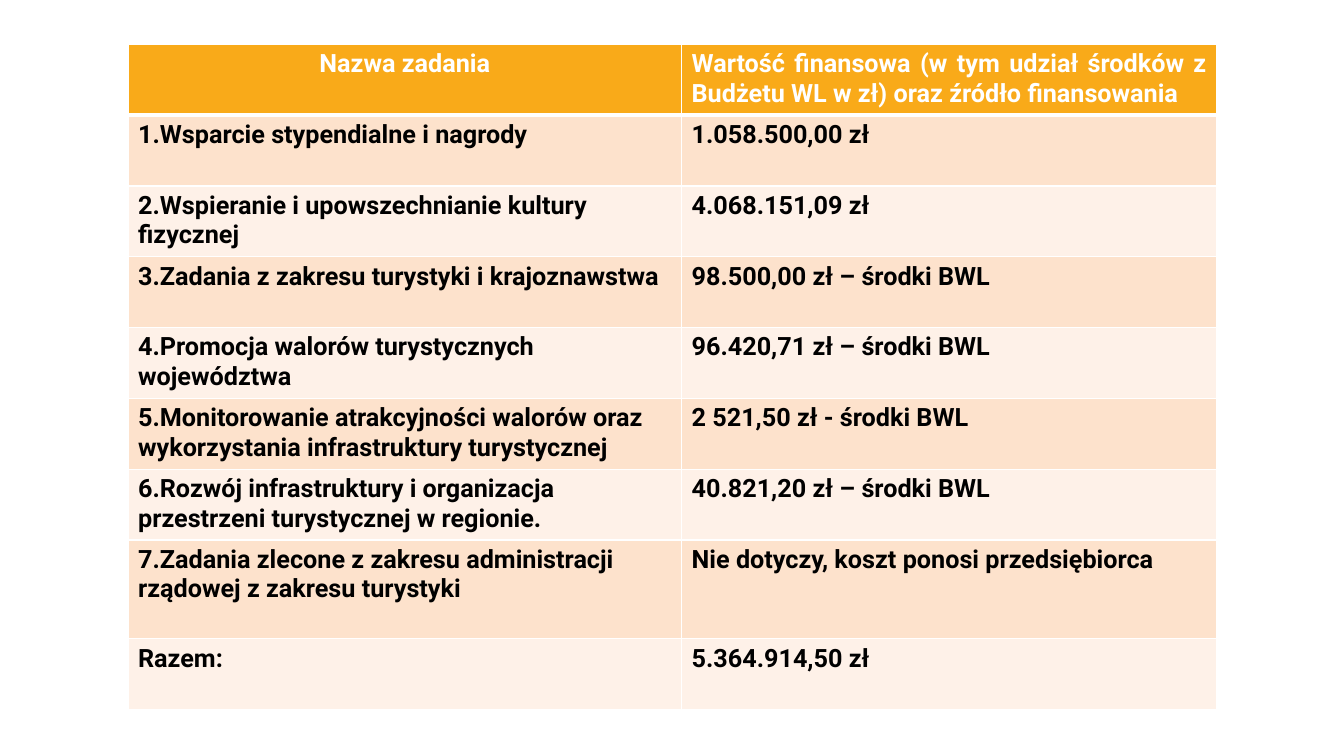
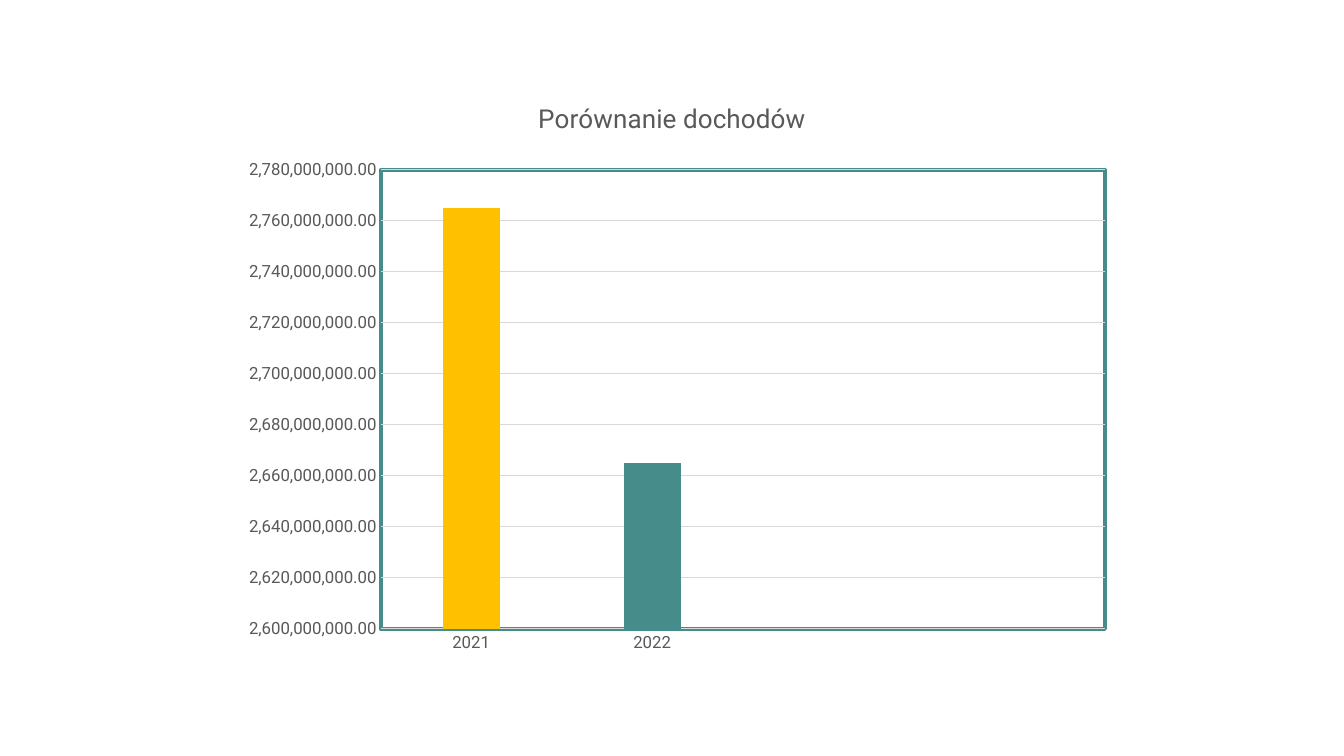
"""Build a budget table slide and an income chart slide."""
from lxml import etree
from pptx import Presentation
from pptx.chart import data
from pptx.dml import color
from pptx.enum import chart as kinds, text as txt
from pptx.oxml import ns, parse_xml
from pptx.util import Inches, Pt

FONT = "Roboto"
WHITE, BLACK, GREY, RULE = "FFFFFF", "000000", "595959", "D9D9D9"
GOLD, TEAL, AMBER = "FFC000", "468C8A", "F9AA19"
RED, PINK = "F2494C", "F39891"
BANDS = ("FDE2CC", "FEF1E8")
LEFT, MID, JUST = txt.PP_ALIGN.LEFT, txt.PP_ALIGN.CENTER, txt.PP_ALIGN.JUSTIFY

HEADS = (
    ("Nazwa zadania", MID),
    ("Wartość finansowa (w tym udział środków z Budżetu WL w zł) "
     "oraz źródło finansowania", JUST),
)
TASKS = (
    ("1.Wsparcie stypendialne i nagrody", "1.058.500,00 zł"),
    ("2.Wspieranie i upowszechnianie kultury fizycznej", "4.068.151,09 zł"),
    ("3.Zadania z zakresu turystyki i krajoznawstwa",
     "98.500,00 zł – środki BWL"),
    ("4.Promocja walorów turystycznych województwa",
     "96.420,71 zł – środki BWL"),
    ("5.Monitorowanie atrakcyjności walorów oraz wykorzystania "
     "infrastruktury turystycznej", "2 521,50 zł - środki BWL"),
    ("6.Rozwój infrastruktury i organizacja przestrzeni turystycznej "
     "w regionie.", "40.821,20 zł – środki BWL"),
    ("7.Zadania zlecone z zakresu administracji rządowej z zakresu turystyki",
     "Nie dotyczy, koszt ponosi przedsiębiorca"),
    ("Razem:", "5.364.914,50 zł"),
)
TALL = 7
SERIES = (
    ("Series 1", (2765000000, 2665000000, None, None), GOLD),
    ("Series 2", (), RED),
    ("Series 3", (), PINK),
)


def rgb(tone):
    """Turn a hex string into a colour."""
    return color.RGBColor.from_string(tone)


def paint(fill, tone):
    """Make a fill solid in one colour."""
    fill.solid()
    fill.fore_color.rgb = rgb(tone)


def style(font, size, tone, bold=False):
    """Set the shared typeface with a size, colour and weight."""
    font.name, font.size, font.bold = FONT, Pt(size), bold
    font.color.rgb = rgb(tone)


def write(frame, words, size=18, tone=BLACK, bold=True, align=LEFT):
    """Put formatted text in the first paragraph of a frame."""
    para = frame.paragraphs[0]
    para.alignment = align
    run = para.add_run()
    run.text = words
    style(run.font, size, tone, bold)


def edge(cell, base=1):
    """Draw white borders round a cell, with a bottom width in points."""
    props = cell._tc.get_or_add_tcPr()
    for side, width in zip("LRTB", (1, 1, 1, base)):
        line = etree.SubElement(props, ns.qn(f"a:ln{side}"), w=str(Pt(width)))
        fill = etree.SubElement(line, ns.qn("a:solidFill"))
        etree.SubElement(fill, ns.qn("a:srgbClr"), val=WHITE)


def budget(slide, left, top, width, height):
    """Place the table of tasks and costs in a box."""
    rows = [HEADS] + [[(words, LEFT) for words in task] for task in TASKS]
    table = slide.shapes.add_table(
        len(rows), 2, Inches(left), Inches(top), Inches(width), Inches(height)
    ).table
    first, deep = 5.49, 0.98
    step = (height - deep) / (len(rows) - 1)
    for col, size in zip(table.columns, (first, width - first)):
        col.width = Inches(size)
    for row, line in enumerate(rows):
        table.rows[row].height = Inches(deep if row == TALL else step)
        head = row == 0
        for col, (words, align) in enumerate(line):
            cell = table.cell(row, col)
            edge(cell, 3 if head else 1)
            paint(cell.fill, AMBER if head else BANDS[(row - 1) % 2])
            write(cell.text_frame, words, align=align,
                  tone=WHITE if head else BLACK)


def place(area, x, y, w, h):
    """Fix the inner plot area in fractions of the chart."""
    for old in area.findall(ns.qn("c:layout")):
        area.remove(old)
    area.insert(0, parse_xml(
        f'<c:layout {ns.nsdecls("c")}><c:manualLayout>'
        '<c:layoutTarget val="inner"/>'
        '<c:xMode val="edge"/><c:yMode val="edge"/>'
        f'<c:x val="{x}"/><c:y val="{y}"/><c:w val="{w}"/><c:h val="{h}"/>'
        '</c:manualLayout></c:layout>'))


def frame(area, tone, width):
    """Outline the plot area of a chart."""
    area.append(parse_xml(
        f'<c:spPr {ns.nsdecls("c", "a")}><a:noFill/><a:ln w="{Pt(width)}">'
        f'<a:solidFill><a:srgbClr val="{tone}"/></a:solidFill>'
        '</a:ln></c:spPr>'))


def income(slide, left, top, width, height):
    """Place the income column chart in a box."""
    facts = data.CategoryChartData(number_format="#,##0.00")
    facts.categories = ["2021", "2022", "", ""]
    for name, vals, _ in SERIES:
        facts.add_series(name, vals)
    chart = slide.shapes.add_chart(
        kinds.XL_CHART_TYPE.COLUMN_CLUSTERED, Inches(left), Inches(top),
        Inches(width), Inches(height), facts).chart
    style(chart.font, 10, BLACK)
    chart.has_legend = False
    chart.has_title = True
    title = chart.chart_title
    title.include_in_layout = False
    write(title.text_frame, "Porównanie dochodów", size=18.6, tone=GREY,
          bold=False, align=MID)

    plot = chart.plots[0]
    plot.gap_width, plot.overlap, plot.vary_by_categories = 219, -27, False
    for bars, (_, _, tone) in zip(plot.series, SERIES):
        paint(bars.format.fill, tone)
    paint(plot.series[0].points[1].format.fill, TEAL)

    cats, vals = chart.category_axis, chart.value_axis
    for axis in (cats, vals):
        style(axis.tick_labels.font, 12, GREY)
        axis.major_tick_mark = kinds.XL_TICK_MARK.NONE
        axis.minor_tick_mark = kinds.XL_TICK_MARK.NONE
    vals.minimum_scale, vals.maximum_scale = 2600000000, 2780000000
    vals.major_unit = 20000000
    vals.tick_labels.number_format = "#,##0.00"
    vals.tick_labels.number_format_is_linked = False
    vals.format.line.fill.background()
    for line in (cats.format.line, vals.major_gridlines.format.line):
        line.width = Pt(0.75)
        line.color.rgb = rgb(RULE)

    area = chart._chartSpace.chart.plotArea
    place(area, 0.175, 0.151, 0.808, 0.768)
    frame(area, TEAL, 3)


def main():
    """Build both slides and save them."""
    deck = Presentation()
    deck.slide_width, deck.slide_height = Inches(13.33), Inches(7.5)
    blank = deck.slide_layouts[6]
    budget(deck.slides.add_slide(blank), 1.27, 0.44, 10.8, 6.6)
    income(deck.slides.add_slide(blank), 2.22, 0.79, 8.89, 5.93)
    deck.save("out.pptx")


if __name__ == "__main__":
    main()
